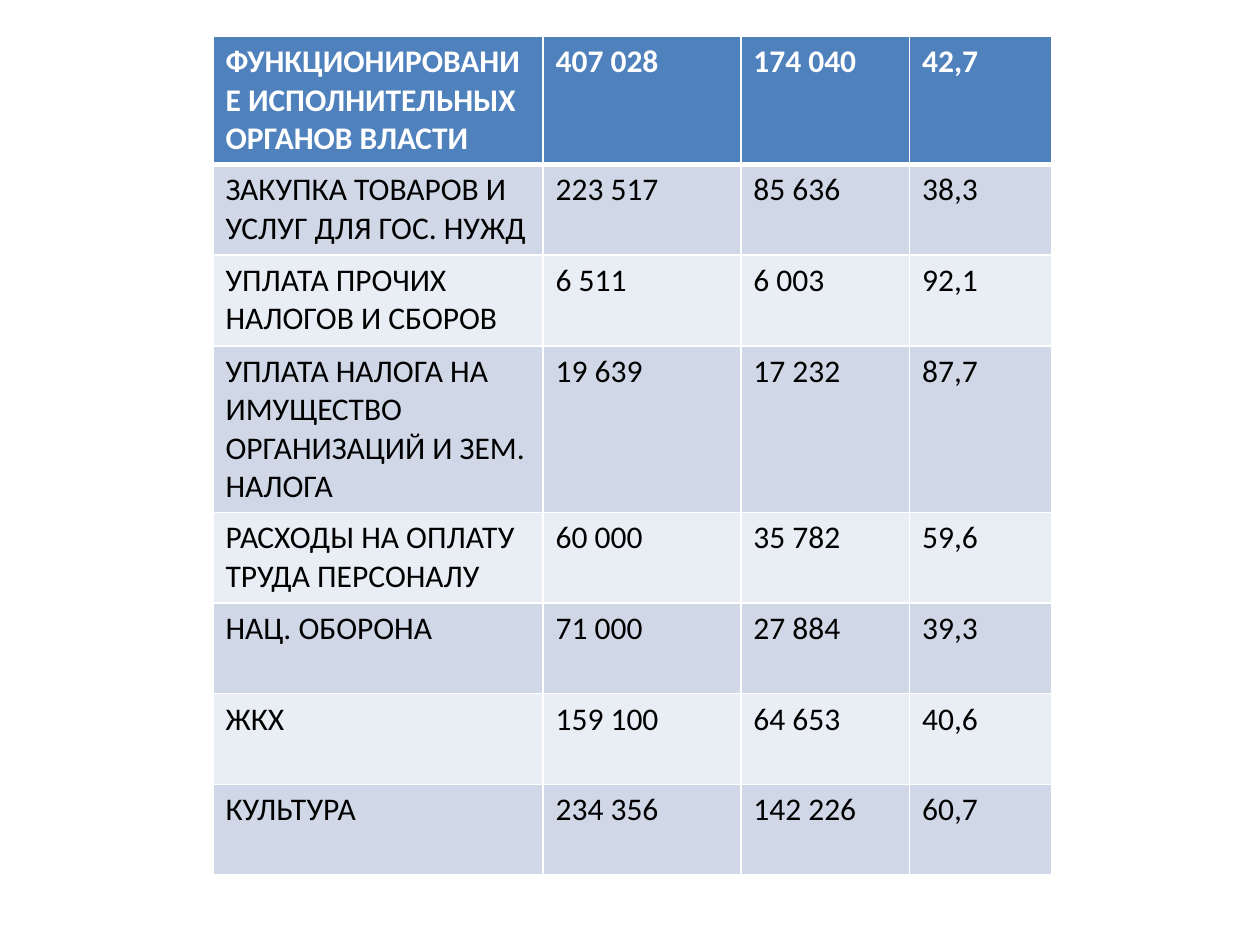
from lxml import etree
from pptx import Presentation
from pptx import util as u
from pptx.dml import color
from pptx.oxml import ns

PX = 9144
FONT = "Calibri"
WHITE, BLACK, HEADER = "FFFFFF", "000000", "4F81BD"
BANDS = ("D0D8E8", "E9EDF4")
COLUMN_WIDTHS = (262, 157, 134, 113)
ROW_HEIGHT = 72
BUDGET_ROWS = (
    ("ФУНКЦИОНИРОВАНИЕ ИСПОЛНИТЕЛЬНЫХ ОРГАНОВ ВЛАСТИ", "407 028", "174 040", "42,7"),
    ("ЗАКУПКА ТОВАРОВ И УСЛУГ ДЛЯ ГОС. НУЖД", "223 517", "85 636", "38,3"),
    ("УПЛАТА ПРОЧИХ НАЛОГОВ И СБОРОВ", "6 511", "6 003", "92,1"),
    ("УПЛАТА НАЛОГА НА ИМУЩЕСТВО ОРГАНИЗАЦИЙ И ЗЕМ. НАЛОГА", "19 639", "17 232", "87,7"),
    ("РАСХОДЫ НА ОПЛАТУ ТРУДА ПЕРСОНАЛУ", "60 000", "35 782", "59,6"),
    ("НАЦ. ОБОРОНА", "71 000", "27 884", "39,3"),
    ("ЖКХ", "159 100", "64 653", "40,6"),
    ("КУЛЬТУРА", "234 356", "142 226", "60,7"),
)


def px(length):
    """Turn whole px into EMU."""
    return u.Emu(length * PX)


def rgb(value):
    """Turn a hex string into a colour."""
    return color.RGBColor.from_string(value)


def set_borders(cell, top, bottom):
    """Draw white borders, with the top and bottom widths in points."""
    properties = cell._tc.get_or_add_tcPr()
    for side, width in (("L", 1), ("R", 1), ("T", top), ("B", bottom)):
        line = etree.SubElement(properties, ns.qn(f"a:ln{side}"), w=str(u.Pt(width)))
        fill = etree.SubElement(line, ns.qn("a:solidFill"))
        etree.SubElement(fill, ns.qn("a:srgbClr"), val=WHITE)


def format_cell(cell, wording, row):
    """Write and colour one cell according to its row."""
    is_header = row == 0
    set_borders(cell, top=3 if row == 1 else 1, bottom=3 if is_header else 1)
    cell.fill.solid()
    cell.fill.fore_color.rgb = rgb(HEADER if is_header else BANDS[(row - 1) % 2])
    cell.text_frame.text = wording
    for span in cell.text_frame.paragraphs[0].runs:
        span.font.name = FONT
        span.font.size = u.Pt(18)
        span.font.bold = is_header
        span.font.color.rgb = rgb(WHITE if is_header else BLACK)


def add_budget_table(page, left, top):
    """Add the table of budget spending."""
    height = ROW_HEIGHT * len(BUDGET_ROWS)
    table = page.shapes.add_table(
        len(BUDGET_ROWS), len(COLUMN_WIDTHS),
        px(left), px(top), px(sum(COLUMN_WIDTHS)), px(height),
    ).table
    for column, width in zip(table.columns, COLUMN_WIDTHS):
        column.width = px(width)
    for row, wordings in enumerate(BUDGET_ROWS):
        table.rows[row].height = px(ROW_HEIGHT)
        for column, wording in enumerate(wordings):
            format_cell(table.cell(row, column), wording, row)


def main():
    """Build and save the deck."""
    deck = Presentation()
    deck.slide_width, deck.slide_height = px(1000), px(750)
    page = deck.slides.add_slide(deck.slide_layouts[6])
    add_budget_table(page, left=169, top=29)
    deck.save("out.pptx")


if __name__ == "__main__":
    main()
